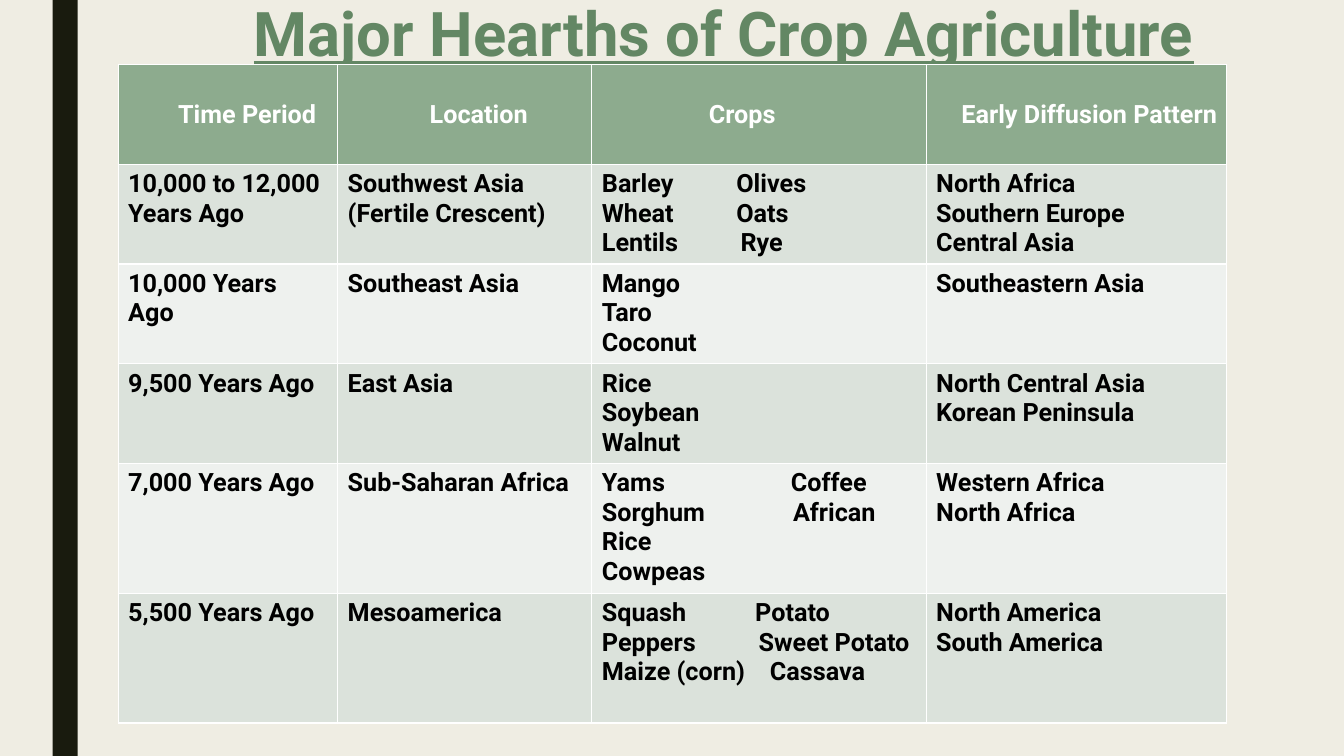
import pptx
import pptx.dml.color
import pptx.enum.shapes
import pptx.enum.text
import pptx.oxml
import pptx.oxml.ns
import pptx.util
from lxml import etree

Pt = pptx.util.Pt

THEME = {
    "font": "Roboto", "title_size": 44, "table_size": 18,
    "background": "EFEDE3", "stripe": "191B0E", "title": "638764",
    "header": "8DAB8E", "bands": ("DBE2DB", "EEF1EE"),
    "header_text": "FFFFFF", "body_text": "000000", "border": "FFFFFF",
}

TITLE = "Major Hearths of Crop Agriculture"
# Heading and its indent in points
HEADINGS = [("Time Period", 35.7), ("Location", 58.6), ("Crops", 76.4),
            ("Early Diffusion Pattern", 18)]
# A cell is a list of lines; a tuple is a line split in two at a tab stop
HEARTHS = [
    (["10,000 to 12,000 Years Ago"],
     ["Southwest Asia", "(Fertile Crescent)"],
     [("Barley", 96, "Olives"), ("Wheat", 96, "Oats"), ("Lentils", 99, "Rye")],
     ["North Africa", "Southern Europe", "Central Asia"]),
    (["10,000 Years Ago"], ["Southeast Asia"],
     ["Mango", "Taro", "Coconut"],
     ["Southeastern Asia"]),
    (["9,500 Years Ago"], ["East Asia"],
     ["Rice", "Soybean", "Walnut"],
     ["North Central Asia", "Korean Peninsula"]),
    (["7,000 Years Ago"], ["Sub-Saharan Africa"],
     [("Yams", 135, "Coffee"), ("Sorghum", 136.5, "African Rice"), "Cowpeas"],
     ["Western Africa", "North Africa"]),
    (["5,500 Years Ago"], ["Mesoamerica"],
     [("Squash", 109.5, "Potato"), ("Peppers", 112, "Sweet Potato"),
      ("Maize (corn)", 120, "Cassava")],
     ["North America", "South America"]),
]

SLIDE_WIDTH, SLIDE_HEIGHT = 960, 540
TABLE_LEFT, TABLE_TOP = 84.4, 46.2
COLUMN_WIDTHS = [156.8, 181.6, 238.8, 214.8]
ROW_HEIGHTS = [71.2] * 4 + [92.8] * 2


def color(name):
    return pptx.dml.color.RGBColor.from_string(name)


def add_run(paragraph, text, size, text_color):
    run = paragraph.add_run()
    run.text = text
    run.font.name = THEME["font"]
    run.font.size = Pt(size)
    run.font.bold = True
    run.font.color.rgb = color(text_color)
    return run


def add_tab_stop(paragraph, position):
    properties = paragraph._p.get_or_add_pPr()
    stops = etree.SubElement(properties, pptx.oxml.ns.qn("a:tabLst"))
    etree.SubElement(stops, pptx.oxml.ns.qn("a:tab"), pos=str(Pt(position)), algn="l")


def style_cell(cell, fill):
    """Give the cell white borders on four sides and a solid fill."""
    properties = cell._tc.get_or_add_tcPr()
    for side in ("lnL", "lnR", "lnT", "lnB"):
        properties.append(pptx.oxml.parse_xml(
            f'<a:{side} {pptx.oxml.ns.nsdecls("a")} w="{Pt(1)}"><a:solidFill>'
            f'<a:srgbClr val="{THEME["border"]}"/></a:solidFill></a:{side}>'))
    cell.fill.solid()
    cell.fill.fore_color.rgb = color(fill)


def fill_heading(cell, text, indent):
    style_cell(cell, THEME["header"])
    cell.vertical_anchor = pptx.enum.text.MSO_ANCHOR.MIDDLE
    cell.margin_left = Pt(7.2 + indent)
    cell.margin_right = Pt(0)
    add_run(cell.text_frame.paragraphs[0], text,
            THEME["table_size"], THEME["header_text"])


def fill_body(cell, lines, band):
    style_cell(cell, band)
    cell.margin_bottom = Pt(1)
    frame = cell.text_frame
    for index, line in enumerate(lines):
        paragraph = frame.add_paragraph() if index else frame.paragraphs[0]
        if isinstance(line, tuple):
            first, position, second = line
            add_tab_stop(paragraph, position)
            line = f"{first}\t{second}"
        add_run(paragraph, line, THEME["table_size"], THEME["body_text"])


def add_stripe(slide):
    stripe = slide.shapes.add_shape(
        pptx.enum.shapes.MSO_SHAPE.RECTANGLE, Pt(37.5), Pt(0), Pt(18), Pt(SLIDE_HEIGHT))
    stripe.shadow.inherit = False
    stripe.fill.solid()
    stripe.fill.fore_color.rgb = color(THEME["stripe"])
    stripe.line.fill.background()


def add_title(slide):
    frame = slide.shapes.add_textbox(Pt(64.8), Pt(0), Pt(895.2), Pt(92)).text_frame
    frame.word_wrap = True
    frame.margin_left = Pt(116.6)
    frame.margin_top = Pt(3)
    paragraph = frame.paragraphs[0]
    paragraph.line_spacing = 0.89
    run = add_run(paragraph, TITLE, THEME["title_size"], THEME["title"])
    run.font.underline = True


def add_hearths_table(slide):
    table = slide.shapes.add_table(
        len(ROW_HEIGHTS), len(COLUMN_WIDTHS), Pt(TABLE_LEFT), Pt(TABLE_TOP),
        Pt(sum(COLUMN_WIDTHS)), Pt(sum(ROW_HEIGHTS))).table
    for column, width in zip(table.columns, COLUMN_WIDTHS):
        column.width = Pt(width)
    for row, height in zip(table.rows, ROW_HEIGHTS):
        row.height = Pt(height)
    for column, (text, indent) in enumerate(HEADINGS):
        fill_heading(table.cell(0, column), text, indent)
    for row, hearth in enumerate(HEARTHS):
        for column, lines in enumerate(hearth):
            fill_body(table.cell(row + 1, column), lines, THEME["bands"][row % 2])


def main():
    presentation = pptx.Presentation()
    presentation.slide_width = Pt(SLIDE_WIDTH)
    presentation.slide_height = Pt(SLIDE_HEIGHT)
    slide = presentation.slides.add_slide(presentation.slide_layouts[6])
    slide.background.fill.solid()
    slide.background.fill.fore_color.rgb = color(THEME["background"])
    add_stripe(slide)
    add_title(slide)
    add_hearths_table(slide)
    presentation.save("out.pptx")


if __name__ == "__main__":
    main()
